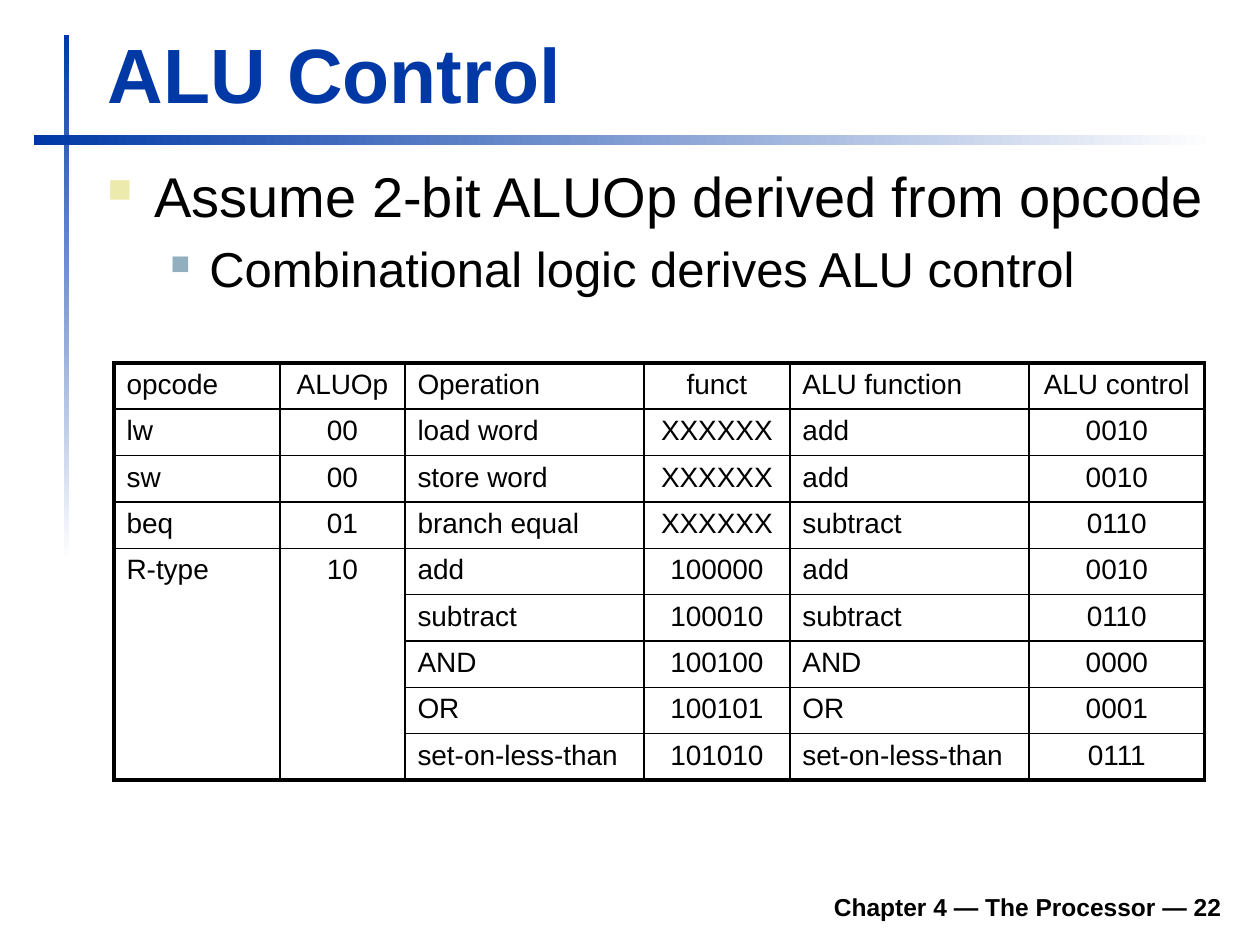
from dataclasses import dataclass

import pptx
import pptx.dml.color
import pptx.enum.shapes
import pptx.enum.text
import pptx.oxml
import pptx.oxml.ns
import pptx.util
from lxml import etree

ALIGN = pptx.enum.text.PP_ALIGN
ANCHOR = pptx.enum.text.MSO_ANCHOR


@dataclass(frozen=True)
class Theme:
    font: str = "Arial"
    accent: str = "0039A6"
    ink: str = "000000"
    paper: str = "FFFFFF"
    bullets: tuple = ("ECEAAC", "91AFBF")
    bullet_percents: tuple = (60, 55)
    body_sizes: tuple = (32, 28)
    title_size: int = 44
    table_size: int = 16
    footer_size: int = 14
    frame_line: float = 2.25
    header_line: float = 1.5
    grid_line: float = 1


def px(length):
    return pptx.util.Emu(round(length * 914400 / 126))


def rgb(color):
    return pptx.dml.color.RGBColor.from_string(color)


def add_xml(parent, tag, **attributes):
    values = {key: str(value) for key, value in attributes.items()}
    return etree.SubElement(parent, pptx.oxml.ns.qn(tag), values)


class SlideBuilder:
    def __init__(self, slide, theme):
        self.slide = slide
        self.theme = theme

    def set_text(self, paragraph, text, size, color=None, bold=False, align=ALIGN.LEFT):
        paragraph.text = text
        paragraph.alignment = align
        paragraph.font.name = self.theme.font
        paragraph.font.size = pptx.util.Pt(size)
        paragraph.font.bold = bold
        paragraph.font.color.rgb = rgb(color or self.theme.ink)

    def fading_bar(self, left, top, width, height, angle):
        bar = self.slide.shapes.add_shape(
            pptx.enum.shapes.MSO_SHAPE.RECTANGLE, px(left), px(top), px(width), px(height))
        bar.shadow.inherit = False
        bar.line.fill.background()
        bar.fill.gradient()
        bar.fill.gradient_angle = angle
        for stop, color in zip(bar.fill.gradient_stops, (self.theme.accent, self.theme.paper)):
            stop.color.rgb = rgb(color)

    def title(self, text, left, top, width, height):
        title = self.slide.shapes.title
        title.left, title.top, title.width, title.height = map(px, (left, top, width, height))
        title.text_frame.vertical_anchor = ANCHOR.BOTTOM
        title.text_frame.auto_size = pptx.enum.text.MSO_AUTO_SIZE.NONE
        self.set_text(title.text_frame.paragraphs[0], text, self.theme.title_size,
                      self.theme.accent, bold=True)

    def text_box(self, left, top, width, height):
        frame = self.slide.shapes.add_textbox(px(left), px(top), px(width), px(height)).text_frame
        frame.word_wrap = True
        return frame

    def footer(self, text, left, top, width, height):
        frame = self.text_box(left, top, width, height)
        frame.vertical_anchor = ANCHOR.BOTTOM
        self.set_text(frame.paragraphs[0], text, self.theme.footer_size, bold=True,
                      align=ALIGN.RIGHT)

    def outline(self, items, left, top, width, height):
        """Add one bulleted paragraph for each (level, text) item."""
        frame = self.text_box(left, top, width, height)
        indents = ((47, 47), (102, 39))
        for index, (level, text) in enumerate(items):
            paragraph = frame.add_paragraph() if index else frame.paragraphs[0]
            self.set_text(paragraph, text, self.theme.body_sizes[level])
            paragraph.level = level
            margin, hanging = indents[level]
            properties = paragraph._p.get_or_add_pPr()
            properties.set("marL", str(px(margin)))
            properties.set("indent", str(-px(hanging)))
            spacing = etree.Element(pptx.oxml.ns.qn("a:spcBef"))
            add_xml(spacing, "a:spcPct", val=20000)
            bullet_color = etree.Element(pptx.oxml.ns.qn("a:buClr"))
            add_xml(bullet_color, "a:srgbClr", val=self.theme.bullets[level])
            bullet_size = etree.Element(
                pptx.oxml.ns.qn("a:buSzPct"), val=str(self.theme.bullet_percents[level] * 1000))
            bullet = etree.Element(pptx.oxml.ns.qn("a:buChar"), char="■")
            for position, element in enumerate((spacing, bullet_color, bullet_size, bullet)):
                properties.insert(position, element)

    def border(self, cell, side, width):
        line = add_xml(cell._tc.get_or_add_tcPr(), f"a:ln{side}", w=pptx.util.Pt(width))
        add_xml(add_xml(line, "a:solidFill"), "a:srgbClr", val=self.theme.ink)

    def table(self, rows, column_widths, centered, merged, left, top, height):
        """Draw a grid; merged lists (first row, last row, column)."""
        table = self.slide.shapes.add_table(
            len(rows), len(column_widths), px(left), px(top),
            px(sum(column_widths)), px(height)).table
        table.first_row = table.horz_banding = False
        for column, width in zip(table.columns, column_widths):
            column.width = px(width)
        for first, last, column in merged:
            table.cell(first, column).merge(table.cell(last, column))

        theme = self.theme
        frame, header, grid = theme.frame_line, theme.header_line, theme.grid_line
        last_row, last_column = len(rows) - 1, len(column_widths) - 1
        for r, row in enumerate(rows):
            for c, text in enumerate(row):
                cell = table.cell(r, c)
                if cell.is_spanned:
                    cell.fill.background()
                    continue
                bottom_row = r + cell.span_height - 1 if cell.is_merge_origin else r
                self.border(cell, "L", frame if c == 0 else grid)
                self.border(cell, "R", frame if c == last_column else grid)
                self.border(cell, "T", {0: frame, 1: header}.get(r, grid))
                self.border(cell, "B", {0: header, last_row: frame}.get(bottom_row, grid))
                cell.fill.background()
                self.set_text(cell.text_frame.paragraphs[0], text, theme.table_size,
                              align=ALIGN.CENTER if c in centered else ALIGN.LEFT)


def main():
    deck = pptx.Presentation()
    deck.slide_width, deck.slide_height = px(1260), px(945)
    builder = SlideBuilder(deck.slides.add_slide(deck.slide_layouts[5]), Theme())

    builder.fading_bar(64, 35, 5, 525, angle=270)
    builder.fading_bar(34, 135, 1181, 10, angle=0)
    builder.footer("Chapter 4 — The Processor — 22", 233, 879, 1001, 49)
    builder.title("ALU Control", 95, 20, 1138, 105)
    builder.outline([
        (0, "Assume 2-bit ALUOp derived from opcode"),
        (1, "Combinational logic derives ALU control"),
    ], 95, 155, 1140, 704)

    control_rows = [
        ("opcode", "ALUOp", "Operation", "funct", "ALU function", "ALU control"),
        ("lw", "00", "load word", "XXXXXX", "add", "0010"),
        ("sw", "00", "store word", "XXXXXX", "add", "0010"),
        ("beq", "01", "branch equal", "XXXXXX", "subtract", "0110"),
        ("R-type", "10", "add", "100000", "add", "0010"),
        ("", "", "subtract", "100010", "subtract", "0110"),
        ("", "", "AND", "100100", "AND", "0000"),
        ("", "", "OR", "100101", "OR", "0001"),
        ("", "", "set-on-less-than", "101010", "set-on-less-than", "0111"),
    ]
    builder.table(control_rows, (166, 125, 239, 146, 239, 176), centered=(1, 3, 5),
                  merged=((4, 8, 0), (4, 8, 1)), left=114, top=363, height=417)
    deck.save("out.pptx")


if __name__ == "__main__":
    main()
